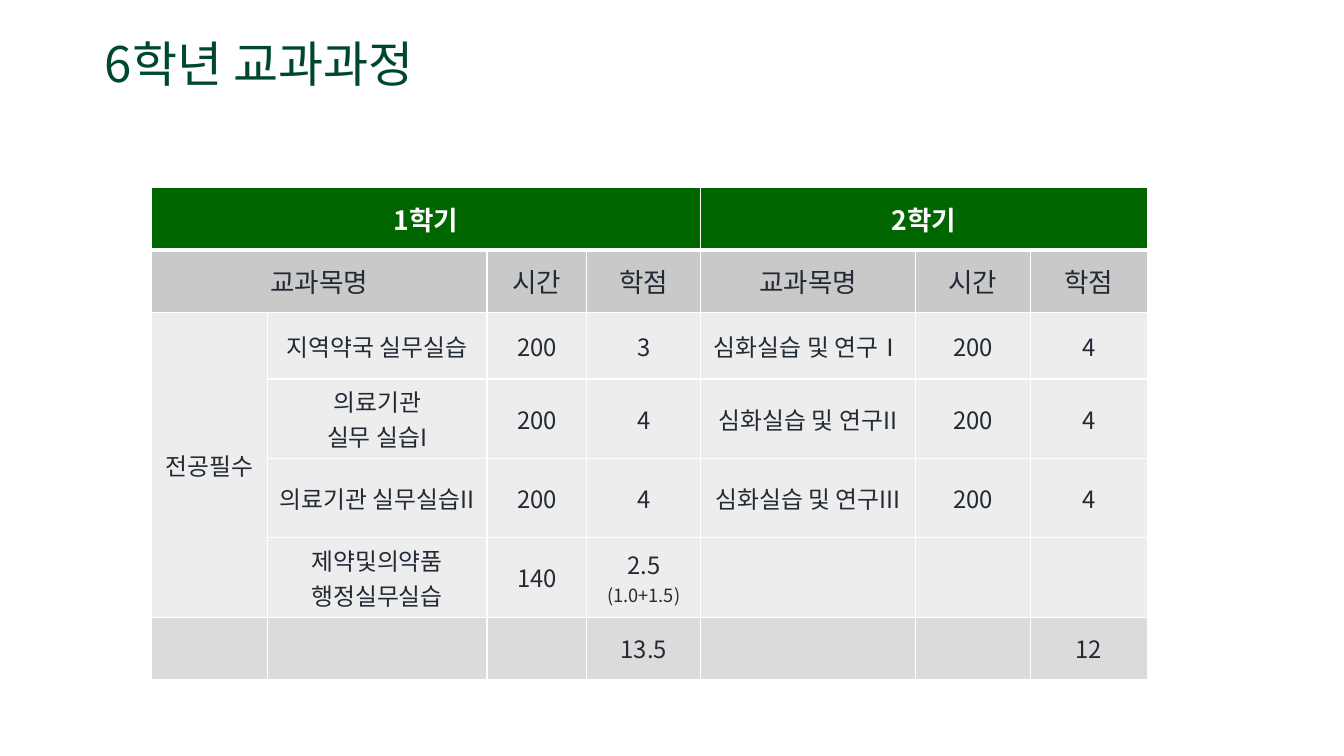
from dataclasses import dataclass
from lxml.etree import SubElement
from pptx import Presentation
from pptx.dml.color import RGBColor
from pptx.enum.text import MSO_ANCHOR, MSO_AUTO_SIZE, PP_ALIGN
from pptx.oxml.ns import qn
from pptx.util import Inches, Pt

FONT = "Noto Sans CJK KR"
COLORS = {
    "title": "00482B", "text": "222A35", "white": "FFFFFF",
    "head": "006600", "label": "C9C9C9", "body": "EDEDED", "total": "DBDBDB",
}
WIDTHS = [1.15, 2.18, 0.99, 1.13, 2.13, 1.14, 1.16]
NOTE = 13


@dataclass
class Row:
    cells: list[str]
    fill: str = "body"
    height: float = 0.66
    size: int = 17
    ink: str = "text"
    bold: bool = False
    rule: int = 1


@dataclass
class Span:
    top: int
    left: int
    bottom: int
    right: int


ROWS = [
    Row(["1학기", "", "", "", "2학기", "", ""], "head", 0.62, 19, "white", True, 3),
    Row(["교과목명", "", "시간", "학점", "교과목명", "시간", "학점"], "label", 0.62, 19),
    Row(["전공필수", "지역약국 실무실습", "200", "3", "심화실습 및 연구Ⅰ", "200", "4"]),
    Row(["", "의료기관\n실무 실습I", "200", "4", "심화실습 및 연구II", "200", "4"]),
    Row(["", "의료기관 실무실습II", "200", "4", "심화실습 및 연구III", "200", "4"]),
    Row(["", "제약및의약품\n행정실무실습", "140", "2.5\n(1.0+1.5)", "", "", ""]),
    Row(["", "", "", "13.5", "", "", "12"], "total", 0.62),
]
SPANS = [Span(0, 0, 0, 3), Span(0, 4, 0, 6), Span(1, 0, 1, 1), Span(2, 0, 5, 0)]


def style(run, size: int, ink: str, bold: bool = False) -> None:
    """Format a run, with the same face for Latin and Korean letters."""
    for key, value in {"name": FONT, "size": Pt(size), "bold": bold}.items():
        setattr(run.font, key, value)
    run.font.color.rgb = RGBColor.from_string(COLORS[ink])
    SubElement(run.font._element, qn("a:ea"), typeface=FONT)


def edge(cell, rule: int) -> None:
    """Draw white cell borders; rule is the width of the bottom one."""
    props = cell._tc.get_or_add_tcPr()
    for side, width in {"L": 1, "R": 1, "T": 1, "B": rule}.items():
        line = SubElement(props, qn(f"a:ln{side}"), w=str(Pt(width)))
        fill = SubElement(line, qn("a:solidFill"))
        SubElement(fill, qn("a:srgbClr"), val=COLORS["white"])


def fill_cell(cell, text: str, row: Row) -> None:
    edge(cell, row.rule)
    cell.fill.solid()
    cell.fill.fore_color.rgb = RGBColor.from_string(COLORS[row.fill])
    cell.vertical_anchor = MSO_ANCHOR.MIDDLE
    if not text:
        return
    cell.text = text
    for para in cell.text_frame.paragraphs:
        para.alignment = PP_ALIGN.CENTER
        size = NOTE if para.text.startswith("(") else row.size
        for run in para.runs:
            style(run, size, row.ink, row.bold)


def add_title(slide, text: str) -> None:
    title = slide.shapes.title
    place = {"left": 0.94, "top": 0.22, "width": 11.01, "height": 0.89}
    for key, value in place.items():
        setattr(title, key, Inches(value))
    frame = title.text_frame
    frame.text = text
    frame.vertical_anchor = MSO_ANCHOR.MIDDLE
    frame.auto_size = MSO_AUTO_SIZE.NONE
    para = frame.paragraphs[0]
    para.alignment = PP_ALIGN.LEFT
    para.line_spacing = 0.9
    style(para.runs[0], 35, "title")


def add_plan(slide) -> None:
    """Add the table of courses, hours and credits."""
    high = sum(row.height for row in ROWS)
    table = slide.shapes.add_table(
        len(ROWS), len(WIDTHS), Inches(1.5), Inches(1.86),
        Inches(sum(WIDTHS)), Inches(high)).table
    table.horz_banding = False
    for col, width in zip(table.columns, WIDTHS):
        col.width = Inches(width)
    for line, row in zip(table.rows, ROWS):
        line.height = Inches(row.height)
        for cell, text in zip(line.cells, row.cells):
            fill_cell(cell, text, row)
    for span in SPANS:
        last = table.cell(span.bottom, span.right)
        table.cell(span.top, span.left).merge(last)


def main() -> None:
    deck = Presentation()
    deck.slide_width, deck.slide_height = Inches(13.33), Inches(7.5)
    slide = deck.slides.add_slide(deck.slide_layouts[5])
    add_title(slide, "6학년 교과과정")
    add_plan(slide)
    deck.save("out.pptx")


if __name__ == "__main__":
    main()
